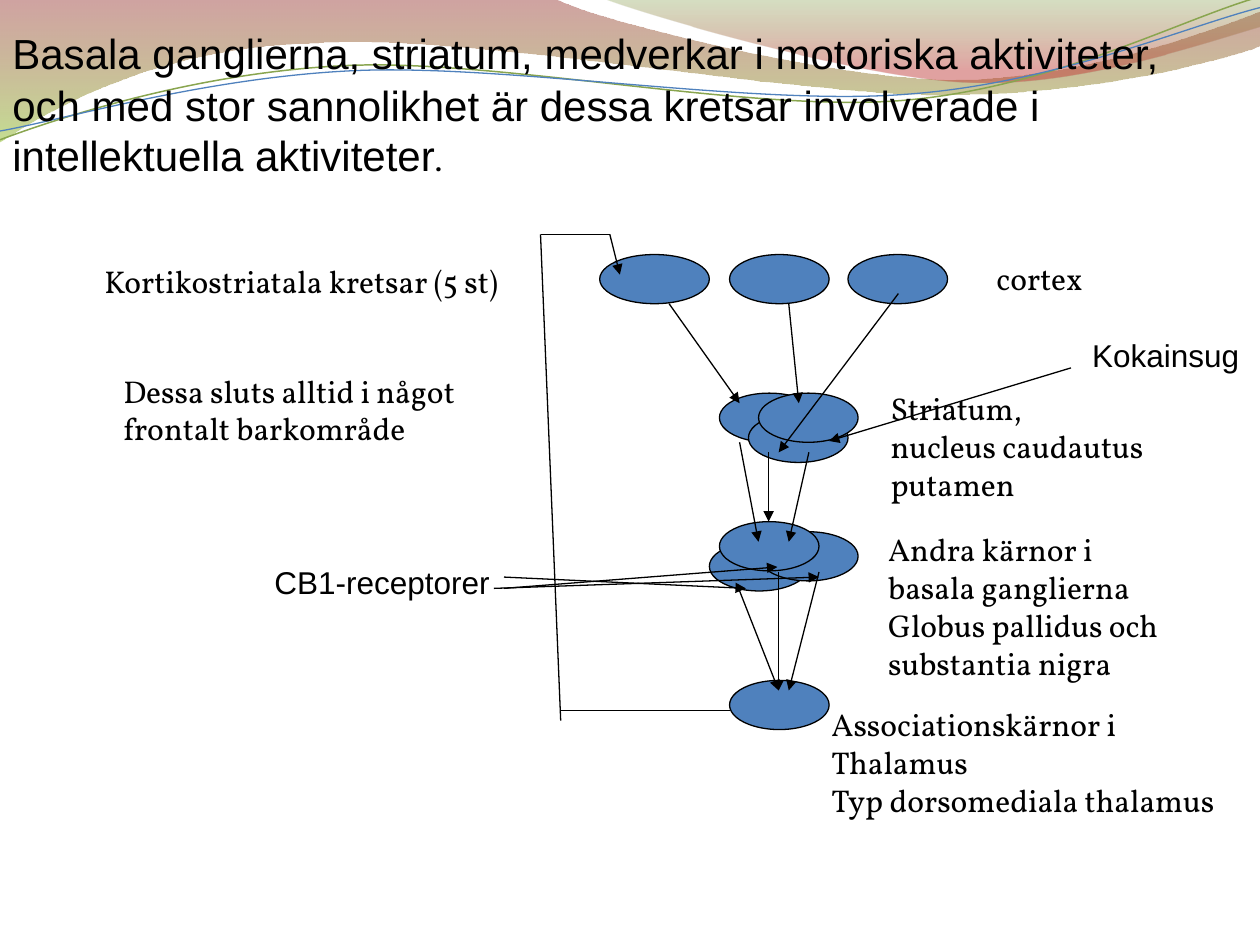
import math

import pptx
import pptx.dml.color
import pptx.enum.shapes
import pptx.enum.text
import pptx.oxml
import pptx.oxml.ns
import pptx.util

HUES = {"ink": "000000", "blue": "4F81BD", "lime": "89A54F", "red": "973330",
        "green": "95C238", "moss": "769537", "rose": "BE3330"}
SPACE = pptx.oxml.ns.nsdecls("a")


def size(inch):
    return pptx.util.Cm(inch * 2.54)


def hue(name):
    return pptx.dml.color.RGBColor.from_string(HUES[name])


def stroke(item, name="ink", width=0.75):
    item.line.color.rgb = hue(name)
    item.line.width = pptx.util.Pt(width)


def curve(slide, box, start, parts, close, angle=0):
    left, top, width, height = box
    turn = math.radians(-angle)

    def place(x, y):
        dx, dy = x - left - width / 2, y - top - height / 2
        u = dx * math.cos(turn) - dy * math.sin(turn) + width / 2
        v = dx * math.sin(turn) + dy * math.cos(turn) + height / 2
        return f'<a:pt x="{int(size(u))}" y="{int(size(v))}"/>'

    maker = slide.shapes.build_freeform(size(left), size(top), scale=1.0)
    maker.add_line_segments([(size(left + width), size(top + height))], close=False)
    shape = maker.convert_to_shape()
    steps = [f"<a:moveTo>{place(*start)}</a:moveTo>"]
    for part in parts:
        tag = "lnTo" if len(part) == 2 else "cubicBezTo"
        spots = "".join(place(x, y) for x, y in zip(part[::2], part[1::2]))
        steps.append(f"<a:{tag}>{spots}</a:{tag}>")
    if close:
        steps.append("<a:close/>")
    route = next(shape._element.iter(pptx.oxml.ns.qn("a:path")))
    for child in list(route):
        route.remove(child)
    for child in list(pptx.oxml.parse_xml(f'<a:path {SPACE}>{"".join(steps)}</a:path>')):
        route.append(child)
    shape.rotation = angle
    shape.shadow.inherit = False
    shape.fill.background()
    return shape


def blend(shape, stops):
    marks = "".join(
        f'<a:gs pos="{pos * 1000}"><a:srgbClr val="{HUES[name]}">'
        f'<a:alpha val="{alpha * 1000}"/></a:srgbClr></a:gs>' for pos, name, alpha in stops)
    fill = pptx.oxml.parse_xml(
        f'<a:gradFill {SPACE}><a:gsLst>{marks}</a:gsLst>'
        '<a:lin ang="5400000" scaled="0"/></a:gradFill>')
    props = shape._element.spPr
    props.replace(props.find(pptx.oxml.ns.qn("a:noFill")), fill)


def waves(slide):
    bands = [
        ((-0.01, -0.01, 10.02, 1.14), (0, 0),
         [(4.4, -0.01), (4.76, 0.17, 6.64, 0.63, 7.58, 0.63),
          (8.53, 0.63, 9.58, 0.26, 10, 0.09), (10.01, 0.36),
          (9.83, 0.44, 8.7, 0.76, 7.46, 0.75), (6.22, 0.75, 3.82, 0.28, 2.57, 0.34),
          (1.29, 0.36, 0.46, 0.83, -0.01, 1.13), (0, 0)],
         [(0, "red", 45), (100, "green", 55)]),
        ((4.79, -0.01, 5.21, 0.7), (4.79, -0.01),
         [(5.09, 0.11, 6.82, 0.62, 7.69, 0.65), (8.56, 0.69, 9.61, 0.32, 10, 0.21),
          (10, 0), (4.79, -0.01)],
         [(0, "moss", 30), (80, "rose", 45)]),
    ]
    for box, start, parts, stops in bands:
        band = curve(slide, box, start, parts, True)
        band.line.fill.background()
        blend(band, stops)
    threads = [
        ((-0.02, 0.22, 10.02, 0.71), (0, 1.11),
         [(0.48, 0.93, 1.58, 0.57, 2.77, 0.52), (3.95, 0.47, 5.93, 0.89, 7.13, 0.8),
          (8.33, 0.71, 9.38, 0.15, 9.98, -0.02)], "lime", 0.85),
        ((-0.02, 0.3, 10.03, 0.58), (0, 1.04),
         [(0.47, 0.96, 1.64, 0.61, 2.83, 0.56), (4.03, 0.51, 5.97, 0.84, 7.17, 0.75),
          (8.36, 0.67, 9.41, 0.21, 10, 0.06)], "blue", 0.75),
    ]
    for box, start, parts, name, width in threads:
        stroke(curve(slide, box, start, parts, False, -2.7), name, width)


def style(run, font, points):
    run.font.name = font
    run.font.size = pptx.util.Pt(points)
    run.font.color.rgb = hue("ink")


def label(slide, box, lines, font="Vollkorn", points=18, wrap=False):
    frame = slide.shapes.add_textbox(*map(size, box)).text_frame
    frame.word_wrap = wrap
    frame.auto_size = pptx.enum.text.MSO_AUTO_SIZE.SHAPE_TO_FIT_TEXT
    frame.text = "\n".join(lines)
    for para in frame.paragraphs:
        for run in para.runs:
            style(run, font, points)
    return frame


def title(slide, box):
    left, top = box
    label(slide, (left, top, 9.41, 0.5),
          ["Basala ganglierna, striatum, medverkar i motoriska aktiviteter,"], "Arial", 24)
    rest = label(slide, (left, top + 0.41, 8.45, 0.9),
                 ["och med stor sannolikhet är dessa kretsar involverade i",
                  "intellektuella aktiviteter"], "Arial", 24)
    dot = rest.paragraphs[-1].add_run()
    dot.text = "."
    style(dot, "Vollkorn", 18)


def link(slide, box, ends, head=True):
    left, top = box
    x, y, u, v = ends
    line = slide.shapes.add_connector(
        pptx.enum.shapes.MSO_CONNECTOR.STRAIGHT,
        size(left + x), size(top + y), size(left + u), size(top + v))
    stroke(line)
    if head:
        line.line._get_or_add_ln().append(
            pptx.oxml.parse_xml(f'<a:tailEnd {SPACE} type="triangle"/>'))
    line._element.spPr.append(pptx.oxml.parse_xml(f'<a:effectLst {SPACE}/>'))


def cells(slide, box):
    left, top = box
    spots = [(0.47, 0.16, 0.87), (1.5, 0.16, 0.79), (2.44, 0.16, 0.79),
             (1.42, 1.26, 0.79), (1.65, 1.42, 0.79), (1.73, 1.26, 0.79),
             (1.34, 2.44, 0.79), (1.73, 2.36, 0.79), (1.42, 2.28, 0.79),
             (1.5, 3.54, 0.79)]
    for x, y, width in spots:
        cell = slide.shapes.add_shape(
            pptx.enum.shapes.MSO_SHAPE.OVAL,
            size(left + x), size(top + y), size(width), size(0.39))
        cell.shadow.inherit = False
        cell.fill.solid()
        cell.fill.fore_color.rgb = hue("blue")
        stroke(cell)


def links(slide, box):
    heads = [
        (1.02, 0.55, 1.58, 1.34), (1.97, 0.55, 2.05, 1.34), (2.84, 0.47, 1.89, 1.73),
        (1.58, 1.65, 1.73, 2.44), (2.13, 1.73, 1.97, 2.44), (1.81, 1.73, 1.81, 2.28),
        (1.58, 2.83, 1.89, 3.62), (2.21, 2.68, 1.97, 3.62), (1.89, 2.68, 1.89, 3.62),
        (0.55, 0, 0.63, 0.32), (-0.29, 2.72, 1.63, 2.81), (-0.29, 2.81, 1.88, 2.64),
        (-0.37, 2.81, 2.21, 2.72), (4.21, 1.06, 2.29, 1.64),
    ]
    plain = [(1.5, 3.78, 0.16, 3.78), (0, 0, 0.16, 3.86), (0, 0, 0.55, 0)]
    for ends in heads:
        link(slide, box, ends)
    for ends in plain:
        link(slide, box, ends, False)


def notes(slide, box):
    left, top = box
    items = [
        ((0, 0.02, 3.38, 0.4), ["Kortikostriatala kretsar (5 st)"], "Vollkorn", False),
        ((0.15, 0.89, 2.88, 0.7), ["Dessa sluts alltid i något", "frontalt barkområde"],
         "Vollkorn", False),
        ((1.35, 2.41, 1.91, 0.4), ["CB1-receptorer"], "Arial", False),
        ((7.08, 0, 0.9, 0.4), ["cortex"], "Vollkorn", False),
        ((7.84, 0.61, 1.37, 0.4), ["Kokainsug"], "Arial", False),
        ((6.24, 1.03, 3.03, 1), ["Striatum,", "nucleus caudautus putamen"], "Vollkorn", True),
        ((6.22, 2.15, 2.4, 1.3),
         ["Andra kärnor i", "basala ganglierna", "Globus pallidus och", "substantia nigra"],
         "Vollkorn", False),
        ((5.77, 3.54, 3.53, 0.7), ["Associationskärnor i Thalamus", "Typ dorsomediala thalamus"],
         "Vollkorn", True),
    ]
    for (x, y, width, height), lines, font, wrap in items:
        label(slide, (left + x, top + y, width, height), lines, font, wrap=wrap)


def main():
    deck = pptx.Presentation()
    deck.slide_width, deck.slide_height = size(10), size(7.5)
    slide = deck.slides.add_slide(deck.slide_layouts[6])
    waves(slide)
    title(slide, (0, 0.17))
    cells(slide, (4.29, 1.86))
    notes(slide, (0.73, 2.01))
    links(slide, (4.29, 1.86))
    deck.save("out.pptx")


if __name__ == "__main__":
    main()
